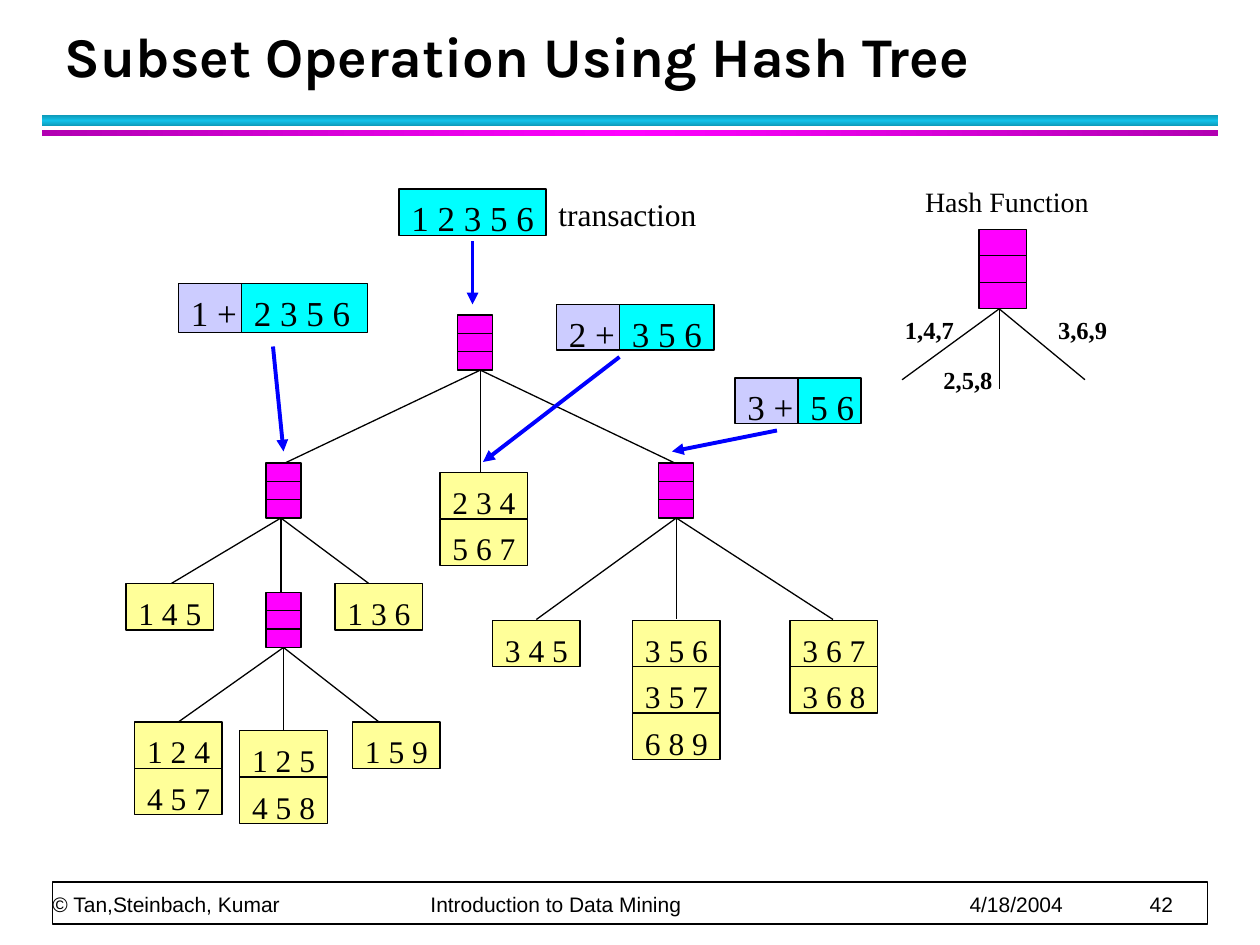
"""Build the hash tree slide."""
import copy
import dataclasses

import pptx
import pptx.dml.color
import pptx.enum.shapes
import pptx.enum.text
import pptx.oxml
import pptx.oxml.ns
import pptx.util

Pt = pptx.util.Pt
qn = pptx.oxml.ns.qn
Rgb = pptx.dml.color.RGBColor.from_string
Anchor = pptx.enum.text.MSO_ANCHOR


@dataclasses.dataclass(frozen=True)
class Theme:
    """Hold the colours, fonts and type sizes."""
    ink: str = "000000"
    paper: str = "FFFFFF"
    node: str = "FF00FF"
    leaf: str = "FFFF99"
    items: str = "00FFFF"
    prefix: str = "CCCCFF"
    arrow: str = "0000FF"
    cyan: tuple = ("0E9BBA", "12C2E9")
    pink: tuple = ("B200B2", "FF00FF")
    serif: str = "Times New Roman"
    sans: str = "Arial"
    head: str = "Karla"
    title: int = 32
    key: int = 20
    body: int = 18
    name: int = 16
    label: int = 14
    foot: int = 12


T = Theme()


def text(shape, words, size=T.body, font=T.serif, bold=False, pad=(7.2, 3.6, 0, 0),
         anchor=Anchor.TOP, wrap=True, lead=None):
    """Write formatted words in a shape and return the paragraph."""
    frame = shape.text_frame
    frame.word_wrap = wrap
    frame.vertical_anchor = anchor
    frame.margin_left, frame.margin_top, frame.margin_right, frame.margin_bottom = map(Pt, pad)
    para = frame.paragraphs[0]
    para.alignment = pptx.enum.text.PP_ALIGN.LEFT
    if lead:
        para.line_spacing = Pt(lead)
    run = para.add_run()
    run.text = words
    run.font.size, run.font.name, run.font.bold = Pt(size), font, bold
    run.font.color.rgb = Rgb(T.ink)
    return para


def field(slide, x, y, w, h):
    """Add an empty text box."""
    return slide.shapes.add_textbox(Pt(x), Pt(y), Pt(w), Pt(h))


def rect(slide, x, y, w, h, fill, width=0.75):
    """Add a filled rectangle with a black edge."""
    shape = slide.shapes.add_shape(pptx.enum.shapes.MSO_SHAPE.RECTANGLE,
                                   Pt(x), Pt(y), Pt(w), Pt(h))
    shape.shadow.inherit = False
    shape.fill.solid()
    shape.fill.fore_color.rgb = Rgb(fill)
    shape.line.color.rgb = Rgb(T.ink)
    shape.line.width = Pt(width)
    return shape


def line(slide, x, y, to_x, to_y, color=T.ink, width=0.75, tip=False):
    """Add a straight line, with an arrowhead at its end if asked."""
    link = slide.shapes.add_connector(pptx.enum.shapes.MSO_CONNECTOR.STRAIGHT,
                                      Pt(x), Pt(y), Pt(to_x), Pt(to_y))
    link.line.color.rgb = Rgb(color)
    link.line.width = Pt(width)
    if tip:
        pptx.oxml.ns.qn("a:tailEnd")
        end = link.line._get_or_add_ln().makeelement(qn("a:tailEnd"), {"type": "triangle"})
        link.line._get_or_add_ln().append(end)
    props = link._element.spPr
    props.append(props.makeelement(qn("a:effectLst"), {}))


def bar(slide, x, y, w, h, tones, angle):
    """Add a bar that shades from the edge tone to the middle one and back."""
    shape = rect(slide, x, y, w, h, tones[0])
    shape.line.fill.background()
    shape.fill.gradient()
    shape.fill.gradient_angle = angle
    stops = shape._element.spPr.find(".//" + qn("a:gsLst"))
    stops.append(copy.deepcopy(stops[0]))
    for stop, tone, place in zip(shape.fill.gradient_stops, (*tones, tones[0]), (0, 0.5, 1)):
        stop.color.rgb = Rgb(tone)
        stop.position = place


def header(slide, x, y, w):
    """Place the title and the two bars below it."""
    text(field(slide, x + 6, y, w - 20, 42), "Subset Operation Using Hash Tree", size=T.title,
         font=T.head, bold=True, pad=(7.2, 3.6, 7.2, 3.6), anchor=Anchor.BOTTOM, lead=36)
    bar(slide, x, y + 54, w, 6, T.cyan, 90)
    bar(slide, x, y + 62.5, w, 3, T.pink, 0)


def footer(slide, x, y, w, h):
    """Place the framed footer with its parts on tab stops."""
    rect(slide, x, y, w, h, T.paper, width=1)
    parts = ("© Tan,Steinbach, Kumar", "Introduction to Data Mining", "4/18/2004", "42")
    para = text(field(slide, x, y, w, 20), "\t".join(parts), size=T.foot, font=T.sans,
                pad=(0, 0, 0, 0), anchor=Anchor.BOTTOM, lead=20)
    props = para._p.get_or_add_pPr()
    tabs = props.makeelement(qn("a:tabLst"), {})
    for stop in (216, 524, 627):
        tabs.append(tabs.makeelement(qn("a:tab"), {"pos": str(Pt(stop)), "algn": "l"}))
    props.append(tabs)


def node(slide, x, y, w, h):
    """Place a hash node of three cells."""
    rect(slide, x, y, w, h, T.node)
    for row in (1, 2):
        line(slide, x, y + row * h / 3, x + w, y + row * h / 3)


def leaf(slide, x, y, sets):
    """Place a stack of item sets."""
    w, h = 50, 26.5
    for row, words in enumerate(sets):
        text(rect(slide, x, y + row * h, w, h, T.leaf), words, pad=(7.2, 6, 0, 0))


def tree(slide, x, y):
    """Place the branches, nodes and leaves of the hash tree."""
    w, h = 20, 31.5
    forks = (
        (189.5, 0, 202.5, ((90, 85), (202.5, 90), (314.5, 85))),
        (80, 84.5, 88.5, ((25, 154), (88.5, 158.5), (139.5, 154))),
        (304.5, 84.5, 314.5, ((234.5, 174), (314.5, 174), (404, 174))),
        (80, 158.5, 90, ((30, 232.5), (90, 237.5), (144.5, 232.5))),
    )
    leaves = (
        (0, 153.5, ("1 4 5",)),
        (119.5, 153.5, ("1 3 6",)),
        (179.5, 90, ("2 3 4", "5 6 7")),
        (5, 232.5, ("1 2 4", "4 5 7")),
        (65, 237.5, ("1 2 5", "4 5 8")),
        (129.5, 232.5, ("1 5 9",)),
        (209.5, 174.5, ("3 4 5",)),
        (289.5, 174.5, ("3 5 6", "3 5 7", "6 8 9")),
        (379.5, 174.5, ("3 6 7", "3 6 8")),
    )
    for left, top, hub, tips in forks:
        for tip_x, tip_y in tips:
            line(slide, x + hub, y + top + h, x + tip_x, y + tip_y)
    for left, top, hub, tips in forks:
        node(slide, x + left, y + top, w, h)
    for left, top, sets in leaves:
        leaf(slide, x + left, y + top, sets)


def split(slide, x, y, w, h, items, prefix=None):
    """Place a transaction, with its fixed prefix cell if it has one."""
    cell = 36 if prefix else 0
    if prefix:
        text(rect(slide, x, y, cell, h, T.prefix), prefix, size=T.key, pad=(7.2, 4.5, 0, 0))
    text(rect(slide, x + cell, y, w - cell, h, T.items), items, size=T.key, pad=(7.2, 4.5, 0, 0))


def steps(slide, x, y):
    """Place the transaction, its splits and the arrows into the tree."""
    split(slide, x + 126, y, 84, 26.5, "1 2 3 5 6")
    split(slide, x, y + 54, 108, 28, "2 3 5 6", prefix="1 +")
    split(slide, x + 216, y + 66, 90, 26, "3 5 6", prefix="2 +")
    split(slide, x + 318, y + 108, 72, 26, "5 6", prefix="3 +")
    text(field(slide, x + 210, y, 94, 29), "transaction", wrap=False)
    arrows = ((168, 30, 168, 66), (54, 90, 60, 150), (252, 96, 174, 156), (342, 138, 282, 150))
    for left, top, to_x, to_y in arrows:
        line(slide, x + left, y + top, x + to_x, y + to_y, color=T.arrow, width=2.25, tip=True)


def legend(slide, x, y):
    """Place the hash function with its three branches."""
    text(field(slide, x + 11.5, y, 109, 27), "Hash Function", size=T.name, wrap=False)
    node(slide, x + 49.5, y + 29, 27, 45.5)
    for tip_x, tip_y in ((5.5, 115), (61, 120.5), (110, 115)):
        line(slide, x + 61, y + 74.5, x + tip_x, y + tip_y)
    for left, top, words in ((0, 74.5, "1,4,7"), (22, 103, "2,5,8"), (87.5, 74.5, "3,6,9")):
        text(field(slide, x + left, y + top, 42.5, 24), words, size=T.label, bold=True, wrap=False)


def main():
    """Build and save the slide."""
    deck = pptx.Presentation()
    deck.slide_width, deck.slide_height = Pt(720), Pt(540)
    slide = deck.slides.add_slide(deck.slide_layouts[6])
    header(slide, 24, 12, 672)
    footer(slide, 30, 504, 660, 24)
    tree(slide, 72, 180)
    steps(slide, 102, 108)
    legend(slide, 510, 102)
    deck.save("out.pptx")


if __name__ == "__main__":
    main()
